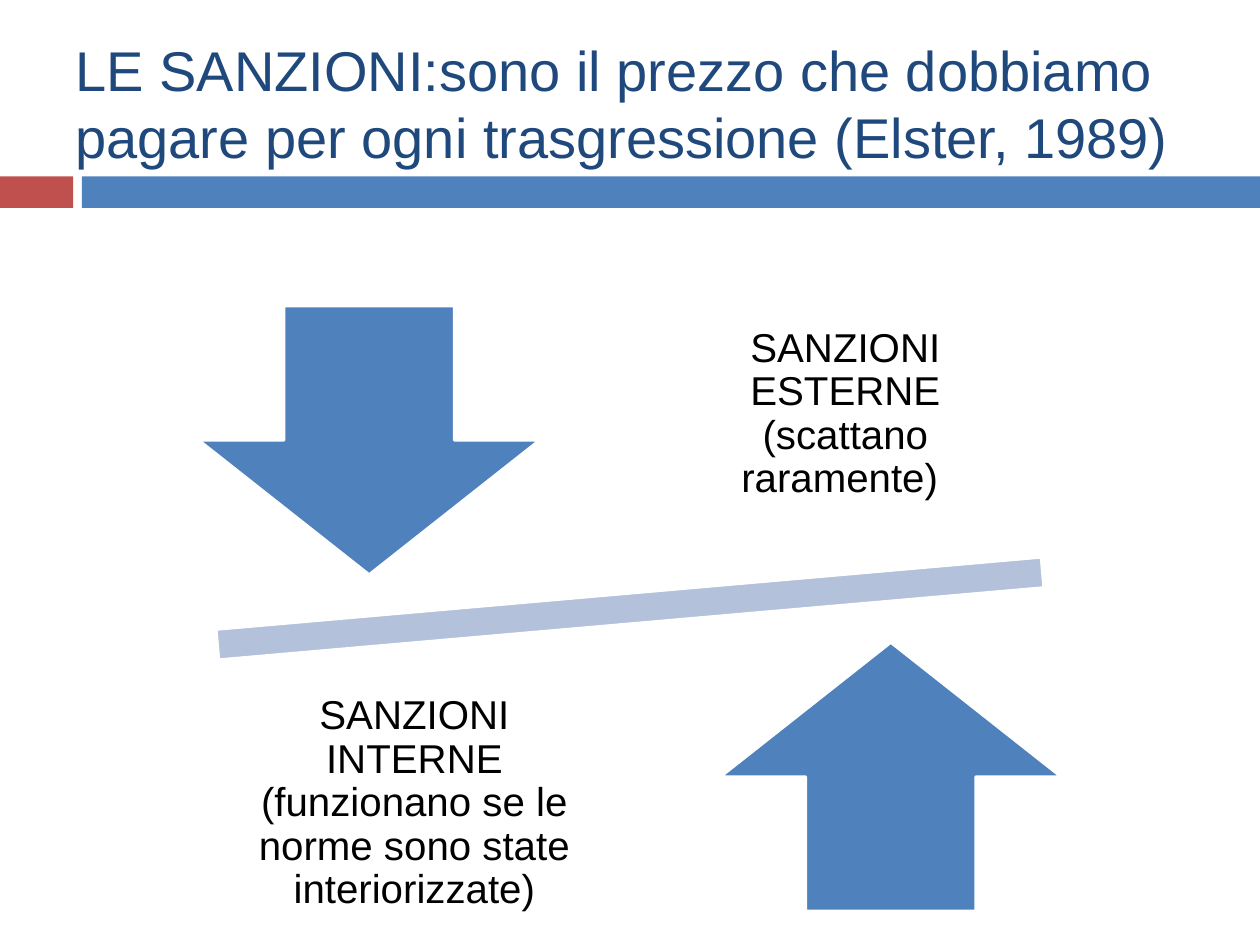
from pptx import Presentation
from pptx.dml.color import RGBColor
from pptx.enum.shapes import MSO_SHAPE as SHAPE
from pptx.enum.text import MSO_ANCHOR as ANCHOR, PP_ALIGN as ALIGN
from pptx.util import Inches, Pt

# Content
TITLE = ("LE SANZIONI:sono il prezzo che dobbiamo pagare "
         "per ogni trasgressione (Elster, 1989)")
BLUE, RED, NAVY, PALE, WHITE = "4F81BD", "C0504D", "1F497D", "B3C1DB", "FFFFFF"

# Left, top, width, height in inches
BANDS = [((0, 1.4, 0.58, 0.25), RED), ((0.65, 1.4, 9.35, 0.25), BLUE)]
BEAM = (0.53, 4.32, 8.94, 1.02)
ARROW_SIZE, LABEL_SIZE = (2.7, 2.13), (2.88, 2.24)
SIDES = [
    # arrow, arrow corner, label, label corner
    (SHAPE.DOWN_ARROW, (1.58, 2.43),
     "SANZIONI ESTERNE (scattano raramente) ", (5.27, 2.17)),
    (SHAPE.UP_ARROW, (5.72, 5.1),
     "SANZIONI INTERNE (funzionano se le norme sono state interiorizzate)",
     (1.85, 5.26)),
]


def color(value):
    return RGBColor.from_string(value)


def add_block(page, kind, place, fill, line=None, rotation=0):
    block = page.shapes.add_shape(kind, *map(Inches, place))
    block.shadow.inherit = False
    block.rotation = rotation
    block.fill.solid()
    block.fill.fore_color.rgb = color(fill)
    if line:
        block.line.color.rgb = color(line)
        block.line.width = Pt(1.5)
    else:
        block.line.fill.background()


def add_text(page, text, place, size, ink="000000", align=ALIGN.LEFT,
             spacing=1.0, inset=None):
    box = page.shapes.add_textbox(*map(Inches, place))
    frame = box.text_frame
    frame.word_wrap = True
    frame.vertical_anchor = ANCHOR.MIDDLE
    if inset is not None:
        frame.margin_left = frame.margin_right = Inches(inset)
        frame.margin_top = frame.margin_bottom = Inches(inset)
    para = frame.paragraphs[0]
    para.alignment = align
    para.line_spacing = spacing
    span = para.add_run()
    span.text = text
    span.font.name = "Arial"
    span.font.size = Pt(size)
    span.font.color.rgb = color(ink)


def main():
    deck = Presentation()
    deck.slide_width, deck.slide_height = Inches(10), Inches(7.5)
    page = deck.slides.add_slide(deck.slide_layouts[6])

    # Heading with its two-colour band
    for place, fill in BANDS:
        add_block(page, SHAPE.RECTANGLE, place, fill)
    add_text(page, TITLE, (0.5, 0.3, 9, 1.03), 32, ink=NAVY)

    # Tilted beam with an arrow and a label on each side
    add_block(page, SHAPE.MATH_MINUS, BEAM, PALE, line=WHITE, rotation=355)
    for arrow, arrow_corner, label, label_corner in SIDES:
        add_block(page, arrow, arrow_corner + ARROW_SIZE, BLUE, line=WHITE)
        add_text(page, label, label_corner + LABEL_SIZE, 23,
                 align=ALIGN.CENTER, spacing=0.9, inset=0.18)

    deck.save("out.pptx")


if __name__ == "__main__":
    main()
